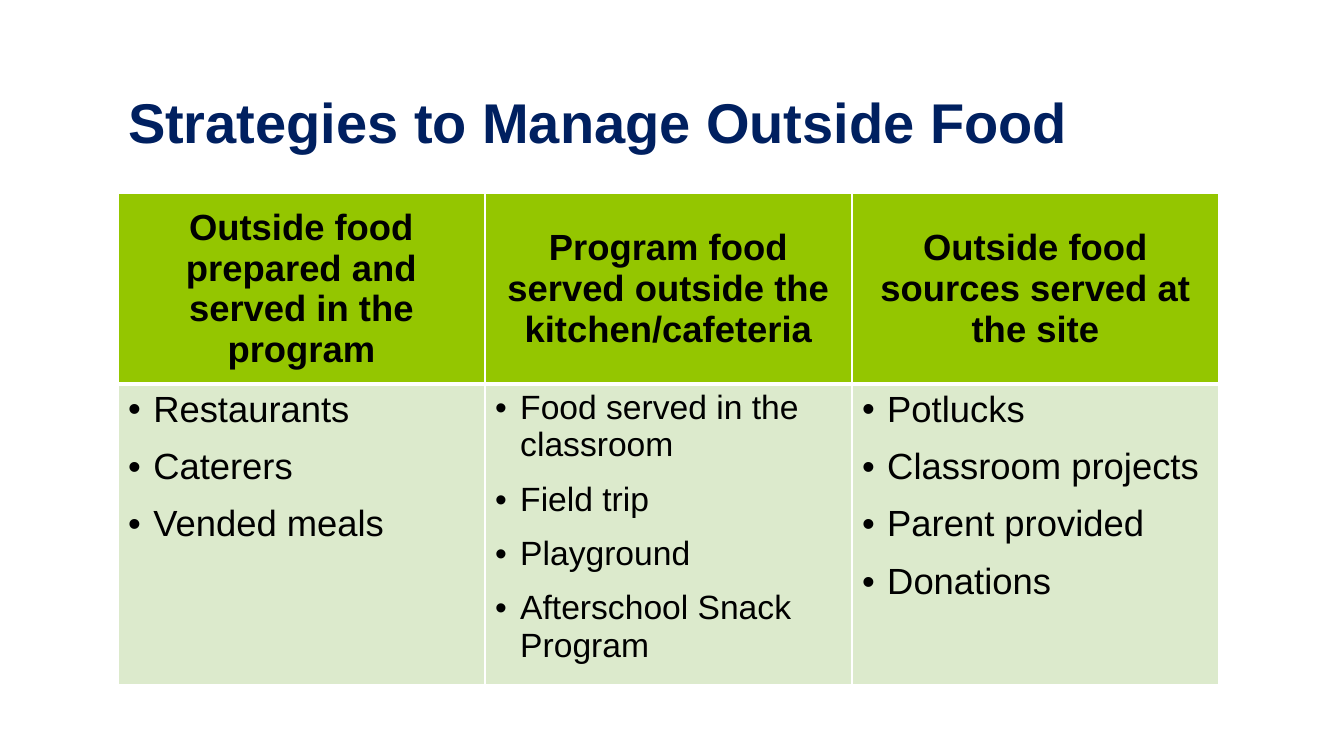
from lxml import etree
from pptx import Presentation
from pptx.dml.color import RGBColor
from pptx.enum.text import MSO_ANCHOR, PP_ALIGN
from pptx.oxml.ns import qn
from pptx.util import Inches, Pt

LEFT, CENTER = PP_ALIGN.LEFT, PP_ALIGN.CENTER
TOP, MIDDLE = MSO_ANCHOR.TOP, MSO_ANCHOR.MIDDLE
COLORS = {"title": "002060", "header": "94C600", "body": "DCEACC",
          "text": "000000", "border": "FFFFFF"}
FONT = "Arial"
TITLE = "Strategies to Manage Outside Food"
COLUMNS = [
    ("Outside food prepared and served in the program", 26,
     ["Restaurants", "Caterers", "Vended meals"]),
    ("Program food served outside the kitchen/cafeteria", 24,
     ["Food served in the classroom", "Field trip", "Playground",
      "Afterschool Snack Program"]),
    ("Outside food sources served at the site", 26,
     ["Potlucks", "Classroom projects", "Parent provided", "Donations"]),
]


def add_bullet(p):
    """Give a paragraph a round bullet with a hanging indent."""
    pPr = p._p.get_or_add_pPr()
    pPr.set("marL", str(Inches(0.25)))
    pPr.set("indent", str(-Inches(0.25)))
    etree.SubElement(pPr, qn("a:buFont")).set("typeface", FONT)
    etree.SubElement(pPr, qn("a:buChar")).set("char", "•")


def write_text(tf, lines, size=26, color="text", bold=False, align=LEFT,
               bullet=False, after=0):
    """Write one formatted paragraph per line into a text frame."""
    for i, line in enumerate(lines):
        p = tf.add_paragraph() if i else tf.paragraphs[0]
        if bullet:
            add_bullet(p)
        p.alignment = align
        p.space_after = Pt(after)
        r = p.add_run()
        r.text = line
        r.font.name = FONT
        r.font.size = Pt(size)
        r.font.bold = bold
        r.font.color.rgb = RGBColor.from_string(COLORS[color])


def style_cell(cell, fill, anchor, top=1, bottom=1):
    """Set a cell's borders, fill and vertical anchor."""
    tcPr = cell._tc.get_or_add_tcPr()
    for side, width in (("L", 1), ("R", 1), ("T", top), ("B", bottom)):
        ln = etree.SubElement(tcPr, qn(f"a:ln{side}"), w=str(Pt(width)))
        solid = etree.SubElement(ln, qn("a:solidFill"))
        etree.SubElement(solid, qn("a:srgbClr"), val=COLORS["border"])
    cell.fill.solid()
    cell.fill.fore_color.rgb = RGBColor.from_string(COLORS[fill])
    cell.vertical_anchor = anchor


def add_title(slide, x, y, w, h):
    """Place the slide title in the given box."""
    sp = slide.shapes.title
    sp.left, sp.top, sp.width, sp.height = map(Inches, (x, y, w, h))
    tf = sp.text_frame
    tf.vertical_anchor = MIDDLE
    write_text(tf, [TITLE], size=40, color="title", bold=True)


def add_strategy_table(slide, x, y, w, h, header_h=1.89):
    """Place the table of strategies in the given box."""
    frame = slide.shapes.add_table(2, len(COLUMNS), *map(Inches, (x, y, w, h)))
    table = frame.table
    table.rows[0].height = Inches(header_h)
    table.rows[1].height = Inches(h - header_h)
    for i, (heading, size, items) in enumerate(COLUMNS):
        table.columns[i].width = Inches(w / len(COLUMNS))
        head, body = table.cell(0, i), table.cell(1, i)
        style_cell(head, "header", MIDDLE, bottom=3)
        write_text(head.text_frame, [heading], bold=True, align=CENTER)
        style_cell(body, "body", TOP, top=3)
        write_text(body.text_frame, items, size=size, bullet=True, after=12)


def main():
    """Build the slide and save it."""
    prs = Presentation()
    prs.slide_width, prs.slide_height = Inches(13.33), Inches(7.5)
    slide = prs.slides.add_slide(prs.slide_layouts[5])
    add_title(slide, 1.17, 0.58, 11.17, 1.25)
    add_strategy_table(slide, 1.17, 1.92, 10.92, 4.87)
    prs.save("out.pptx")


if __name__ == "__main__":
    main()
